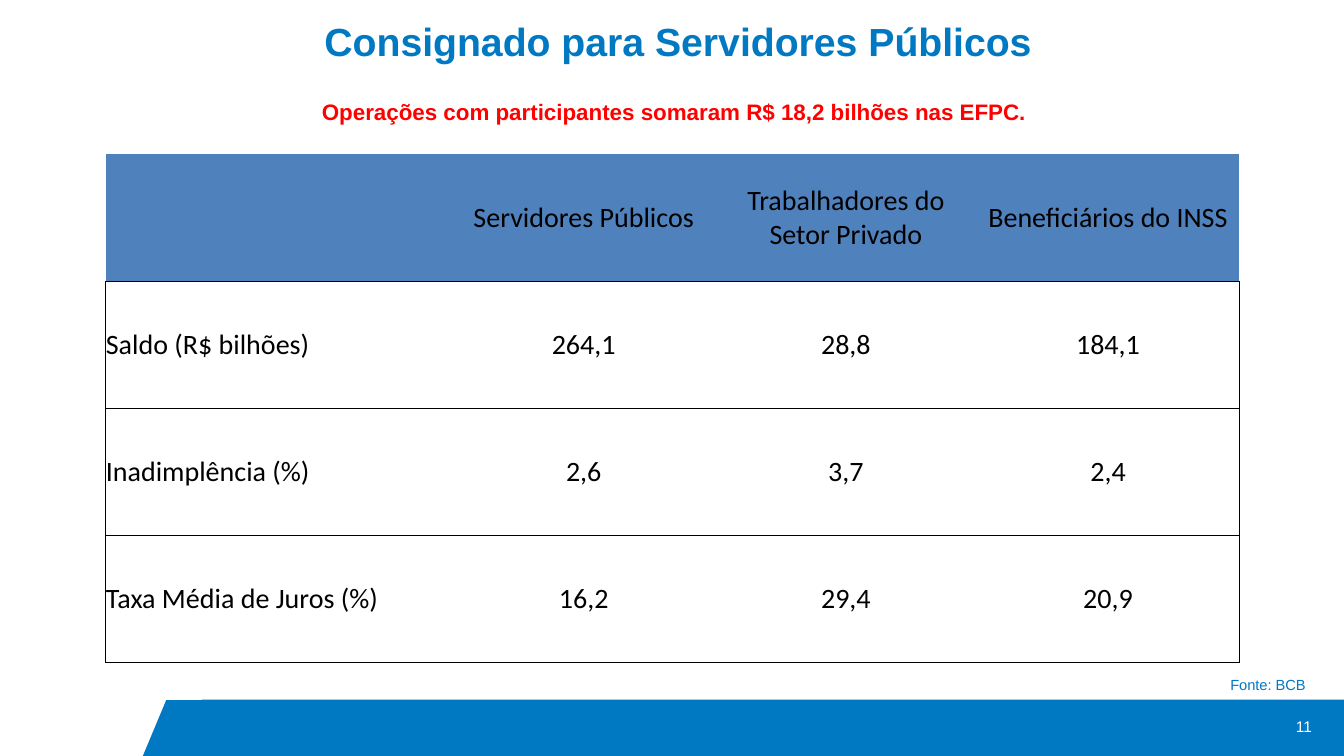
"""Build the slide on payroll loans for public servants."""
from dataclasses import dataclass

import pptx
import pptx.dml.color
import pptx.enum.shapes
import pptx.enum.text
import pptx.oxml
import pptx.oxml.ns
import pptx.util
from pptx.util import Inches


@dataclass(frozen=True)
class Theme:
    blue: str = "0079C2"
    red: str = "FF0000"
    white: str = "FFFFFF"
    black: str = "000000"
    header: str = "4F81BD"
    text_font: str = "Arial"
    table_font: str = "Calibri"
    title_size: float = 28
    subtitle_size: float = 16
    table_size: float = 20
    number_size: float = 11
    source_size: float = 10.5
    border: float = 1


theme = Theme()
Align = pptx.enum.text.PP_ALIGN
Anchor = pptx.enum.text.MSO_ANCHOR
Preset = pptx.enum.shapes.MSO_SHAPE


def style_text(frame, text, font, size, color, align, bold=False):
    frame.text = text
    frame.word_wrap = True
    para = frame.paragraphs[0]
    para.alignment = align
    for span in para.runs:
        span.font.name = font
        span.font.size = pptx.util.Pt(size)
        span.font.bold = bold
        span.font.color.rgb = pptx.dml.color.RGBColor.from_string(color)


def add_border(cell, sides):
    properties = cell._tc.get_or_add_tcPr()
    for index, side in enumerate(sides):
        line = pptx.oxml.parse_xml(
            f'<a:ln{side} {pptx.oxml.ns.nsdecls("a")} w="{pptx.util.Pt(theme.border)}">'
            f'<a:solidFill><a:srgbClr val="{theme.black}"/></a:solidFill></a:ln{side}>'
        )
        properties.insert(index, line)


deck = pptx.Presentation()
deck.slide_width, deck.slide_height = Inches(13.33), Inches(7.5)
page = deck.slides.add_slide(deck.slide_layouts[6])

footer_bar = page.shapes.add_shape(
    Preset.RECTANGLE, Inches(2), Inches(6.94), Inches(11.33), Inches(0.56))
footer_edge = page.shapes.add_shape(
    Preset.FLOWCHART_MANUAL_INPUT, Inches(1.72), Inches(6.64), Inches(0.56), Inches(1.17))
footer_edge.rotation = 90
footer_edge._element.spPr.xfrm.set("flipV", "1")
for shape in (footer_bar, footer_edge):
    shape.shadow.inherit = False
    shape.fill.solid()
    shape.fill.fore_color.rgb = pptx.dml.color.RGBColor.from_string(theme.blue)
    shape.line.fill.background()

labels = [
    ("Consignado para Servidores Públicos", (0.34, 0.18, 12.77, 0.99),
     theme.title_size, theme.blue, Align.CENTER, True, Anchor.TOP, 0.9),
    ("Operações com participantes somaram R$ 18,2 bilhões nas EFPC.", (0.33, 0.95, 12.71, 0.46),
     theme.subtitle_size, theme.red, Align.CENTER, True, Anchor.TOP, 0.9),
    ("Fonte: BCB", (0.28, 6.68, 12.77, 0.36),
     theme.source_size, theme.blue, Align.RIGHT, False, Anchor.TOP, 0.9),
    ("11", (11.67, 7.03, 1.44, 0.36),
     theme.number_size, theme.white, Align.RIGHT, False, Anchor.MIDDLE, 1.0),
]
for text, place, size, color, align, bold, anchor, spacing in labels:
    box = page.shapes.add_textbox(*map(Inches, place))
    style_text(box.text_frame, text, theme.text_font, size, color, align, bold)
    box.text_frame.vertical_anchor = anchor
    box.text_frame.paragraphs[0].line_spacing = spacing

rows = [
    ("", "Servidores Públicos", "Trabalhadores do Setor Privado", "Beneficiários do INSS"),
    ("Saldo (R$ bilhões)", "264,1", "28,8", "184,1"),
    ("Inadimplência (%)", "2,6", "3,7", "2,4"),
    ("Taxa Média de Juros (%)", "16,2", "29,4", "20,9"),
]
widths = (3.44, 2.6, 2.6, 2.6)
table = page.shapes.add_table(
    len(rows), len(widths), Inches(1.05), Inches(1.53), Inches(sum(widths)), Inches(5.04)).table
table.first_row = table.horz_banding = False
style_id = table._tbl.tblPr.find(pptx.oxml.ns.qn("a:tableStyleId"))
style_id.text = "{2D5ABB26-0587-4C30-8999-92F81FD0307C}"
for column, width in zip(table.columns, widths):
    column.width = Inches(width)

for row_index, row in enumerate(rows):
    table.rows[row_index].height = Inches(1.26)
    for column_index, text in enumerate(row):
        cell = table.cell(row_index, column_index)
        cell.margin_left = cell.margin_right = cell.margin_top = cell.margin_bottom = 0
        cell.vertical_anchor = Anchor.MIDDLE
        align = Align.CENTER if column_index else Align.LEFT
        style_text(cell.text_frame, text, theme.table_font, theme.table_size, theme.black, align)
        if row_index == 0:
            cell.fill.solid()
            cell.fill.fore_color.rgb = pptx.dml.color.RGBColor.from_string(theme.header)
            add_border(cell, "B")
        else:
            cell.fill.background()
            outer = {0: "L", len(row) - 1: "R"}.get(column_index, "")
            add_border(cell, outer + "TB")

deck.save("out.pptx")
